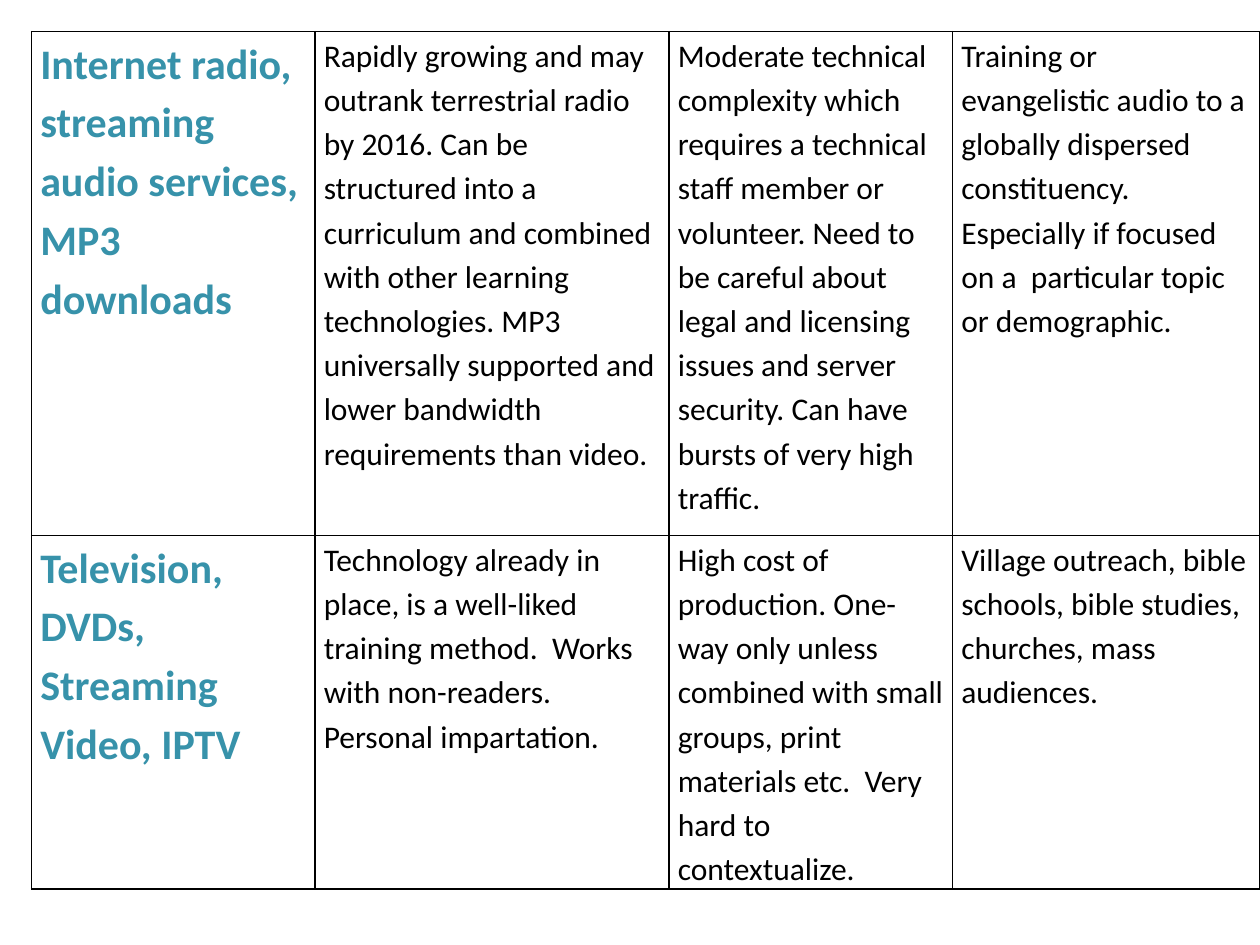
"""Build a slide with a table comparing audio and video media for outreach."""
import pptx
import pptx.dml.color
import pptx.oxml
import pptx.oxml.ns
import pptx.util

Inches = pptx.util.Inches

COLUMN_WIDTHS = [2.25, 2.81, 2.25, 2.44]
ROW_HEIGHTS = [4, 2.54]
MEDIA_ROWS = [
    (
        "Internet radio, streaming audio services, MP3 downloads",
        "Rapidly growing and may outrank terrestrial radio by 2016. Can be "
        "structured into a curriculum and combined with other learning "
        "technologies. MP3 universally supported and lower bandwidth "
        "requirements than video.",
        "Moderate technical complexity which requires a technical staff member "
        "or volunteer. Need to be careful about legal and licensing issues and "
        "server security. Can have bursts of very high traffic.",
        "Training or evangelistic audio to a globally dispersed constituency. "
        "Especially if focused on a  particular topic or demographic.",
    ),
    (
        "Television, DVDs, Streaming Video, IPTV",
        "Technology already in place, is a well-liked training method.  Works "
        "with non-readers. Personal impartation.",
        "High cost of production. One-way only unless combined with small "
        "groups, print materials etc.  Very hard to contextualize.",
        "Village outreach, bible schools, bible studies, churches, mass audiences.",
    ),
]
MEDIUM_FORMAT = {"size": 24, "color": "3792AA", "bold": True}
DETAIL_FORMAT = {"size": 18, "color": "000000", "bold": False}


def hex_color(value):
    return pptx.dml.color.RGBColor.from_string(value)


def write_cell(cell, text, size, color, bold):
    cell.margin_left = cell.margin_right = Inches(0.07)
    cell.margin_top = cell.margin_bottom = 0
    para = cell.text_frame.paragraphs[0]
    para.line_spacing = 1.15
    span = para.add_run()
    span.text = text
    span.font.name = "Calibri"
    span.font.size = pptx.util.Pt(size)
    span.font.bold = bold
    span.font.color.rgb = hex_color(color)


def add_borders(cell, color="000000", width=1):
    properties = cell._tc.get_or_add_tcPr()
    for position, side in enumerate(("lnL", "lnR", "lnT", "lnB")):
        line = pptx.oxml.parse_xml(
            f'<a:{side} {pptx.oxml.ns.nsdecls("a")} w="{pptx.util.Pt(width)}">'
            f'<a:solidFill><a:srgbClr val="{color}"/></a:solidFill></a:{side}>'
        )
        properties.insert(position, line)


def add_media_table(page):
    frame = page.shapes.add_table(
        len(MEDIA_ROWS), len(COLUMN_WIDTHS), Inches(0.25), Inches(0.25),
        Inches(sum(COLUMN_WIDTHS)), Inches(sum(ROW_HEIGHTS)),
    )
    table = frame.table
    table.first_row = table.horz_banding = False
    for column, width in zip(table.columns, COLUMN_WIDTHS):
        column.width = Inches(width)
    for row, height, texts in zip(table.rows, ROW_HEIGHTS, MEDIA_ROWS):
        row.height = Inches(height)
        for index, (cell, text) in enumerate(zip(row.cells, texts)):
            write_cell(cell, text, **(DETAIL_FORMAT if index else MEDIUM_FORMAT))
            cell.fill.background()
            add_borders(cell)


def main():
    deck = pptx.Presentation()
    deck.slide_width, deck.slide_height = Inches(10), Inches(7.5)
    page = deck.slides.add_slide(deck.slide_layouts[6])
    add_media_table(page)
    deck.save("out.pptx")


if __name__ == "__main__":
    main()
